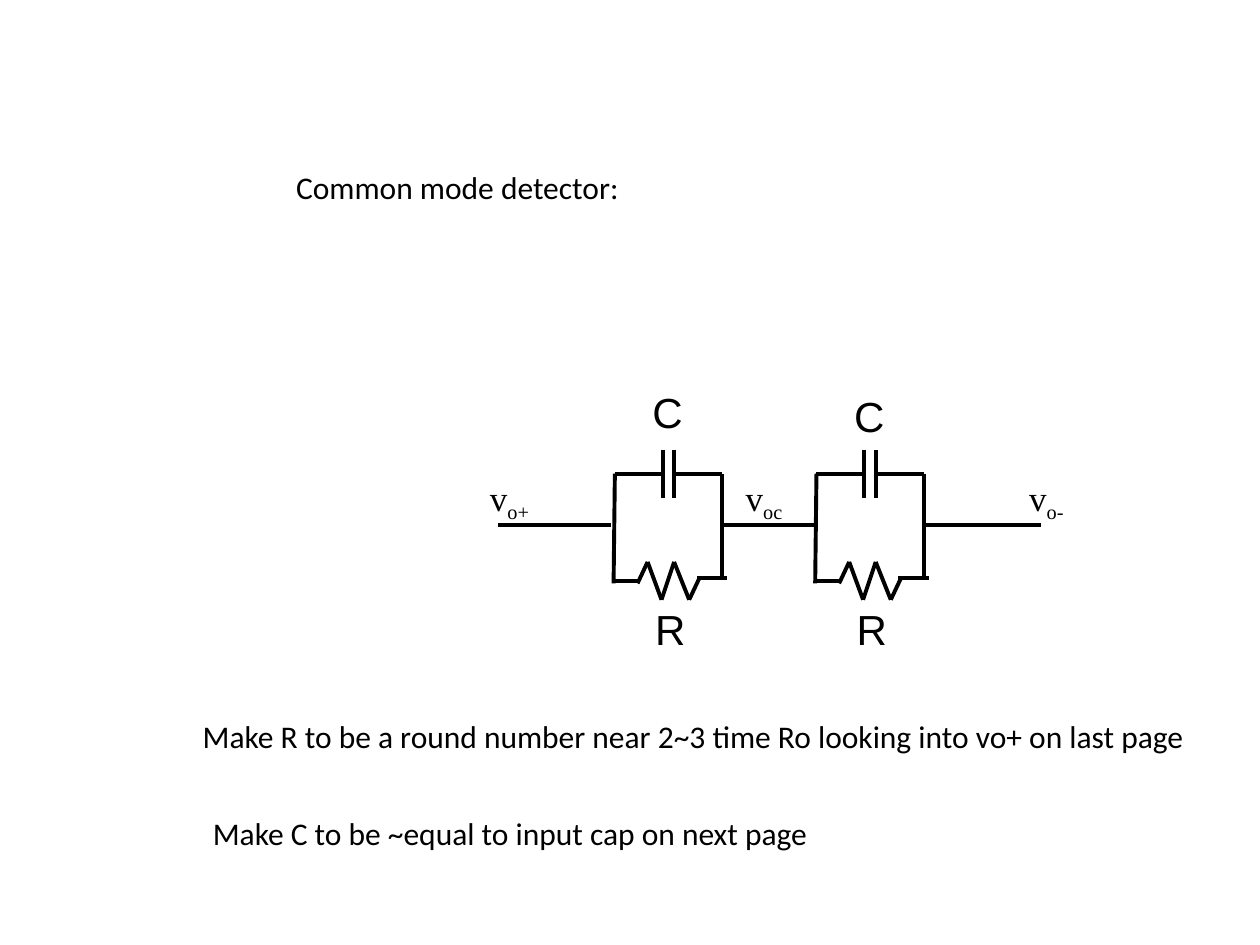
from itertools import pairwise

from pptx import Presentation
from pptx.dml.color import RGBColor
from pptx.enum.text import MSO_ANCHOR, MSO_AUTO_SIZE, PP_ALIGN
from pptx.oxml.ns import qn
from pptx.util import Inches, Pt
from lxml.etree import SubElement

BLACK = RGBColor(0, 0, 0)
WHITE = RGBColor(255, 255, 255)
STEP = 1.6
WIRE_Y = 4.17
TOP_Y = 3.76


class Sketch:
    sans = "Calibri"
    serif = "Times New Roman"
    plain = "Arial"
    width = Pt(2.25)

    def __init__(self, slide):
        self.slide = slide
        fill = slide.background.fill
        fill.solid()
        fill.fore_color.rgb = WHITE

    def style(self, shape, text, size, font, sub=""):
        frame = shape.text_frame
        frame.text = text
        frame.word_wrap = False
        frame.auto_size = MSO_AUTO_SIZE.SHAPE_TO_FIT_TEXT
        frame.vertical_anchor = MSO_ANCHOR.TOP
        para = frame.paragraphs[0]
        para.alignment = PP_ALIGN.LEFT
        if sub:
            para.add_run().text = sub
        for run in para.runs:
            run.font.size = Pt(size)
            run.font.name = font
            run.font.color.rgb = BLACK
        if sub:
            para.runs[1].font._element.set("baseline", "-25000")

    def title(self, text, x, y, w, h):
        shape = self.slide.shapes.title
        shape.left, shape.top = Inches(x), Inches(y)
        shape.width, shape.height = Inches(w), Inches(h)
        self.style(shape, text, 18, self.sans)

    def text(self, text, x, y, w, h, size, font, sub=""):
        box = self.slide.shapes.add_textbox(
            Inches(x), Inches(y), Inches(w), Inches(h))
        self.style(box, text, size, font, sub)

    def note(self, text, x, y, w):
        self.text(text, x, y, w, 0.4, 18, self.sans)

    def node(self, sub, x, w):
        self.text("v", x, 3.73, w, 0.44, 20, self.serif, sub)

    def label(self, name, x, y):
        self.text(name, x, y, 0.45, 0.5, 24, self.plain)

    def line(self, start, end):
        ends = [Inches(v) for v in (*start, *end)]
        line = self.slide.shapes.add_connector(1, *ends)
        line.line.color.rgb = BLACK
        line.line.width = self.width
        SubElement(line._element.spPr, qn("a:effectLst"))

    def cap(self, x):
        self.line((x + 0.86, TOP_Y), (x + 0.48, TOP_Y))
        self.line((x + 0.39, TOP_Y), (x + 0.01, TOP_Y))
        for plate in (x + 0.39, x + 0.48):
            self.line((plate, TOP_Y - 0.19), (plate, TOP_Y + 0.19))

    def coil(self, x):
        turns = [(0.68, 4.59), (0.6, 4.76), (0.48, 4.46),
                 (0.38, 4.76), (0.27, 4.46), (0.19, 4.63)]
        for (x1, y1), (x2, y2) in pairwise(turns):
            self.line((x + x1, y1), (x + x2, y2))
        self.line((x + 0.66, 4.59), (x + 0.9, 4.59))
        self.line((x + 0.2, 4.61), (x, 4.61))

    def cell(self, x):
        self.cap(x)
        self.coil(x)
        self.line((x + 0.86, TOP_Y), (x + 0.86, 4.59))
        self.line((x + 0.01, TOP_Y), (x, 4.63))


def main():
    deck = Presentation()
    deck.slide_width, deck.slide_height = Inches(10), Inches(7.5)
    art = Sketch(deck.slides.add_slide(deck.slide_layouts[5]))

    art.title("Common mode detector:", 2.25, 1.28, 2.79, 0.4)
    for num, top in enumerate((3.02, 3.05)):
        shift = num * STEP
        art.cell(4.87 + shift)
        art.label("R", 5.1 + shift, 4.74)
        art.label("C", 5.08 + shift, top)
    for right, left in ((4.85, 3.95), (8.26, 7.35), (6.47, 5.73)):
        art.line((right, WIRE_Y), (left, WIRE_Y))
    for sub, x, w in (("o+", 3.79, 0.54), ("o-", 8.07, 0.5),
                      ("oc", 5.82, 0.52)):
        art.node(sub, x, w)
    art.note("Make R to be a round number near 2~3 time Ro "
             "looking into vo+ on last page", 1.51, 5.64, 8.09)
    art.note("Make C to be ~equal to input cap on next page",
             1.59, 6.41, 4.99)
    deck.save("out.pptx")


if __name__ == "__main__":
    main()
